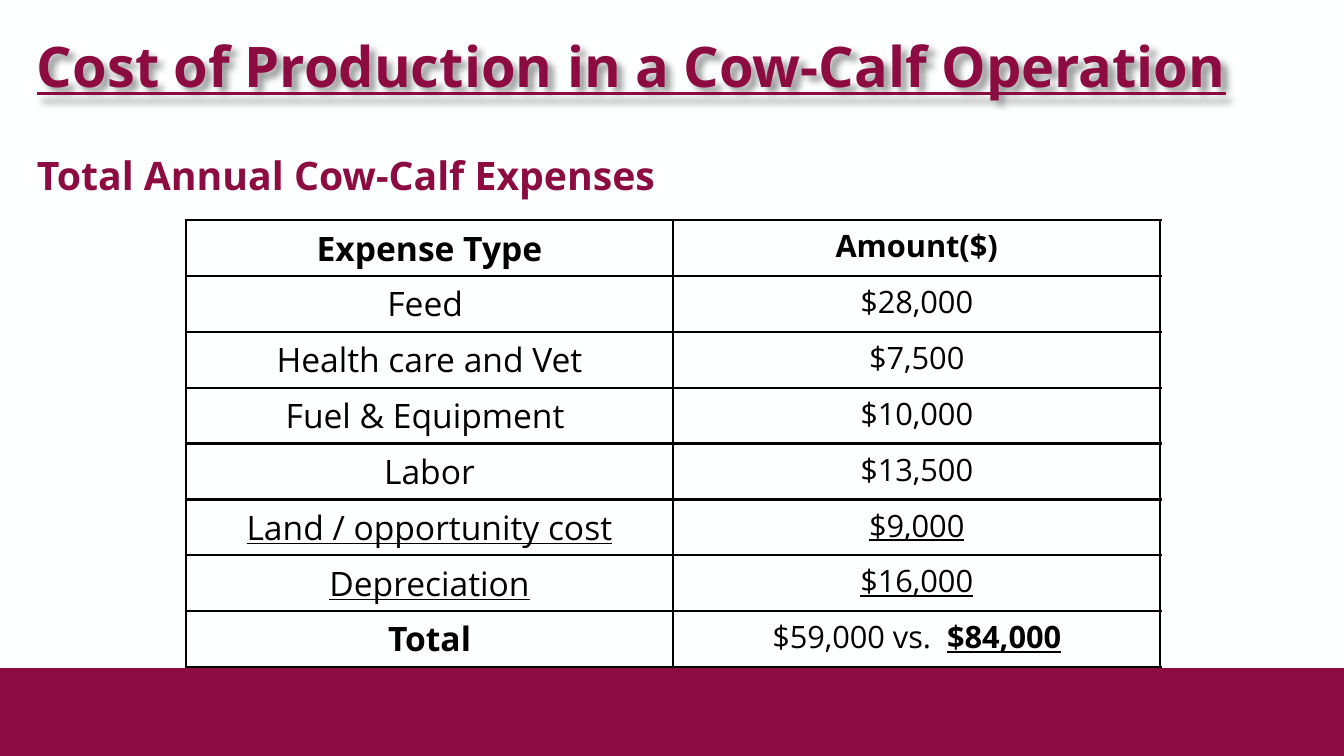
from dataclasses import dataclass

from lxml.etree import SubElement
from pptx import Presentation
from pptx.dml.color import RGBColor
from pptx.enum.shapes import MSO_SHAPE
from pptx.enum.text import MSO_ANCHOR, MSO_AUTO_SIZE, PP_ALIGN
from pptx.oxml import parse_xml
from pptx.oxml.ns import nsdecls, qn
from pptx.slide import Slide
from pptx.table import _Cell
from pptx.text.text import TextFrame, _Paragraph
from pptx.util import Pt


@dataclass(frozen=True)
class Theme:
    font: str = "Open Sans"
    maroon: RGBColor = RGBColor(0x8C, 0x0B, 0x41)
    black: RGBColor = RGBColor(0, 0, 0)
    paper: RGBColor = RGBColor(0xFE, 0xFF, 0xFF)
    title_size: float = 30
    subtitle_size: float = 21
    label_size: float = 18
    amount_size: float = 16.5
    border: float = 1.5
    inset_x: float = 5.4
    inset_y: float = 2.7


@dataclass(frozen=True)
class Span:
    text: str
    bold: bool = False
    underline: bool = False


@dataclass(frozen=True)
class Expense:
    label: Span
    amounts: tuple[Span, ...]


THEME = Theme()

EXPENSES = (
    Expense(Span("Expense Type", bold=True), (Span("Amount($)", bold=True),)),
    Expense(Span("Feed "), (Span("$28,000"),)),
    Expense(Span("Health care and Vet"), (Span("$7,500"),)),
    Expense(Span("Fuel & Equipment "), (Span("$10,000"),)),
    Expense(Span("Labor"), (Span("$13,500"),)),
    Expense(Span("Land / opportunity cost", underline=True), (Span("$9,000", underline=True),)),
    Expense(Span("Depreciation", underline=True), (Span("$16,000", underline=True),)),
    Expense(Span("Total", bold=True),
            (Span("$59,000 vs.  "), Span("$84,000", bold=True, underline=True))),
)


def add_span(para: _Paragraph, span: Span, size: float, color: RGBColor) -> None:
    run = para.add_run()
    run.text = span.text
    run.font.name = THEME.font
    run.font.size = Pt(size)
    run.font.bold = span.bold
    run.font.underline = span.underline
    run.font.color.rgb = color


def set_frame(frame: TextFrame, anchor: MSO_ANCHOR) -> None:
    frame.word_wrap = True
    frame.auto_size = MSO_AUTO_SIZE.NONE
    frame.vertical_anchor = anchor
    frame.margin_left = frame.margin_right = Pt(THEME.inset_x)
    frame.margin_top = frame.margin_bottom = Pt(THEME.inset_y)


def add_band(page: Slide) -> None:
    band = page.shapes.add_shape(MSO_SHAPE.RECTANGLE, Pt(0), Pt(358), Pt(720), Pt(47))
    band.shadow.inherit = False
    band.fill.solid()
    band.fill.fore_color.rgb = THEME.maroon
    band.line.fill.background()


def fill_title(page: Slide, text: str) -> None:
    title = page.shapes.title
    title.left, title.top, title.width, title.height = Pt(14.4), Pt(14.4), Pt(691.2), Pt(54)
    set_frame(title.text_frame, MSO_ANCHOR.TOP)
    para = title.text_frame.paragraphs[0]
    para.alignment = PP_ALIGN.LEFT
    para.line_spacing = 1.0
    add_span(para, Span(text, bold=True, underline=True), THEME.title_size, THEME.maroon)
    # Soft shadow below the letters
    title._element.spPr.append(parse_xml(
        f'<a:effectLst {nsdecls("a")}><a:outerShdw blurRad="{Pt(4)}" dist="{Pt(3)}" '
        'dir="2700000" algn="tl" rotWithShape="0"><a:srgbClr val="000000">'
        '<a:alpha val="40000"/></a:srgbClr></a:outerShdw></a:effectLst>'))


def add_subtitle(page: Slide, text: str) -> None:
    box = page.shapes.add_textbox(Pt(14.4), Pt(50.4), Pt(691.2), Pt(73.4))
    set_frame(box.text_frame, MSO_ANCHOR.MIDDLE)
    para = box.text_frame.paragraphs[0]
    para.line_spacing = 1.5
    add_span(para, Span(text, bold=True), THEME.subtitle_size, THEME.maroon)


def set_borders(cell: _Cell) -> None:
    properties = cell._tc.get_or_add_tcPr()
    for index, side in enumerate(("lnL", "lnR", "lnT", "lnB")):
        line = SubElement(properties, qn(f"a:{side}"), w=str(Pt(THEME.border)))
        fill = SubElement(line, qn("a:solidFill"))
        SubElement(fill, qn("a:srgbClr"), val=str(THEME.black))
        properties.insert(index, line)


def fill_cell(cell: _Cell, spans: tuple[Span, ...], size: float) -> None:
    cell.fill.background()
    set_borders(cell)
    cell.margin_left = cell.margin_right = Pt(THEME.inset_x)
    cell.margin_top = cell.margin_bottom = Pt(THEME.inset_y)
    para = cell.text_frame.paragraphs[0]
    para.alignment = PP_ALIGN.CENTER
    for span in spans:
        add_span(para, span, size, THEME.black)


def add_expense_table(page: Slide, expenses: tuple[Expense, ...]) -> None:
    row_height, column_width = 29.5, 261
    table = page.shapes.add_table(
        len(expenses), 2, Pt(99.6), Pt(118),
        Pt(2 * column_width), Pt(len(expenses) * row_height)).table
    table.first_row = table.horz_banding = False
    for row, expense in enumerate(expenses):
        fill_cell(table.cell(row, 0), (expense.label,), THEME.label_size)
        fill_cell(table.cell(row, 1), expense.amounts, THEME.amount_size)


def main() -> None:
    deck = Presentation()
    deck.slide_width, deck.slide_height = Pt(720), Pt(405)
    page = deck.slides.add_slide(deck.slide_layouts[5])
    page.background.fill.solid()
    page.background.fill.fore_color.rgb = THEME.paper

    # Footer band, headings, then the table
    add_band(page)
    fill_title(page, "Cost of Production in a Cow-Calf Operation")
    add_subtitle(page, "Total Annual Cow-Calf Expenses")
    add_expense_table(page, EXPENSES)
    deck.save("out.pptx")


if __name__ == "__main__":
    main()
